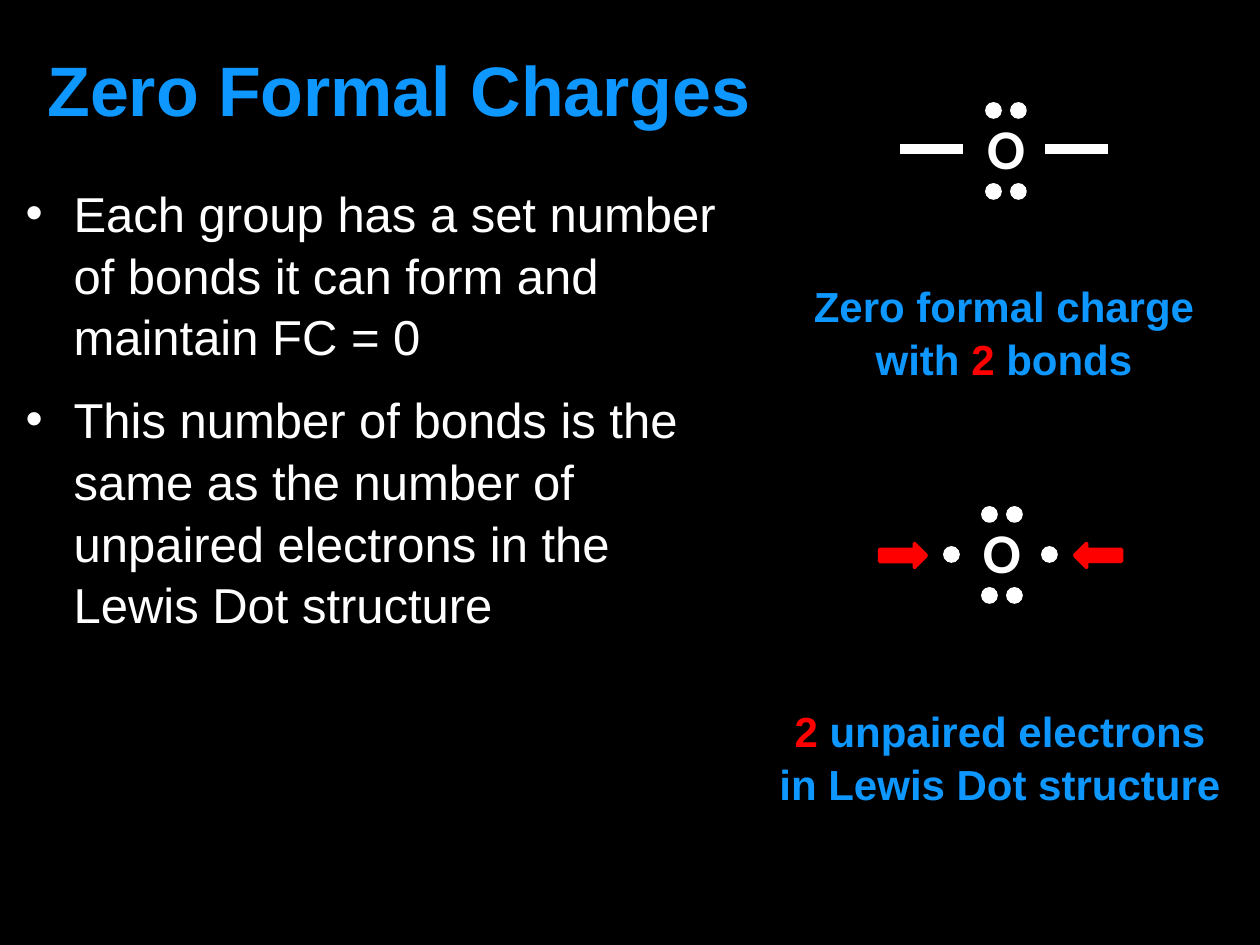
from dataclasses import dataclass

from lxml.etree import SubElement
from pptx import Presentation
from pptx.dml.color import RGBColor
from pptx.enum.shapes import MSO_CONNECTOR, MSO_SHAPE
from pptx.enum.text import MSO_ANCHOR, MSO_AUTO_SIZE, PP_ALIGN
from pptx.oxml.ns import qn
from pptx.util import Emu, Pt

EMU_PER_PX = 914400 / 126


def px(length):
    return Emu(round(length * EMU_PER_PX))


@dataclass(frozen=True)
class Theme:
    black: RGBColor = RGBColor(0x00, 0x00, 0x00)
    white: RGBColor = RGBColor(0xFF, 0xFF, 0xFF)
    blue: RGBColor = RGBColor(0x0D, 0x97, 0xFF)
    red: RGBColor = RGBColor(0xFF, 0x00, 0x00)
    font: str = "Arial"
    atom_font: str = "Calibri"
    title: int = 40
    body: int = 28
    atom: int = 32
    caption: int = 24
    line_spacing: float = 1.05


class SlideBuilder:
    def __init__(self, deck, theme):
        self.theme = theme
        self.slide = deck.slides.add_slide(deck.slide_layouts[1])
        self.shapes = self.slide.shapes
        background = self.slide.background.fill
        background.solid()
        background.fore_color.rgb = theme.black

    def start_group(self):
        self.shapes = self.slide.shapes.add_group_shape().shapes

    def place(self, shape, left, top, width, height):
        bounds = {"left": left, "top": top, "width": width, "height": height}
        for name, value in bounds.items():
            setattr(shape, name, px(value))

    def add_span(self, para, text, size, color, bold=True, font=None):
        span = para.add_run()
        span.text = text
        values = {"name": font or self.theme.font, "size": Pt(size), "bold": bold}
        for name, value in values.items():
            setattr(span.font, name, value)
        span.font.color.rgb = color

    def title(self, text, *bounds):
        box = self.slide.shapes.title
        self.place(box, *bounds)
        frame = box.text_frame
        frame.auto_size = MSO_AUTO_SIZE.NONE
        frame.vertical_anchor = MSO_ANCHOR.MIDDLE
        para = frame.paragraphs[0]
        para.alignment = PP_ALIGN.CENTER
        self.add_span(para, text, self.theme.title, self.theme.blue)

    def bullets(self, items, *bounds):
        box = self.slide.placeholders[1]
        self.place(box, *bounds)
        frame = box.text_frame
        frame.auto_size = MSO_AUTO_SIZE.NONE
        for index, text in enumerate(items):
            para = frame.add_paragraph() if index else frame.paragraphs[0]
            para.space_before = Pt(12)
            para.line_spacing = self.theme.line_spacing
            properties = para._p.get_or_add_pPr()
            for name, value in {"marL": px(48), "indent": -px(48)}.items():
                properties.set(name, str(value))
            SubElement(properties, qn("a:buFont")).set("typeface", self.theme.font)
            SubElement(properties, qn("a:buChar")).set("char", "•")
            self.add_span(para, text, self.theme.body, self.theme.white, bold=False)

    def text_box(self, *bounds):
        box = self.shapes.add_textbox(*map(px, bounds))
        box.text_frame.word_wrap = False
        return box.text_frame

    def caption(self, lines, *bounds):
        """Each line is a list of spans; digits stand out in red."""
        frame = self.text_box(*bounds)
        for index, spans in enumerate(lines):
            para = frame.add_paragraph() if index else frame.paragraphs[0]
            para.alignment = PP_ALIGN.CENTER
            para.line_spacing = self.theme.line_spacing
            for text in spans:
                color = self.theme.red if text.isdigit() else self.theme.blue
                self.add_span(para, text, self.theme.caption, color)

    def symbol(self, text, center_x, center_y):
        frame = self.text_box(center_x - 19, center_y - 38, 38, 68)
        margins = ("margin_left", "margin_top", "margin_right", "margin_bottom")
        for name in margins:
            setattr(frame, name, 0)
        para = frame.paragraphs[0]
        para.alignment = PP_ALIGN.CENTER
        self.add_span(para, text, self.theme.atom, self.theme.white,
                      font=self.theme.atom_font)

    def solid(self, kind, color, line_width, *bounds):
        shape = self.shapes.add_shape(kind, *map(px, bounds))
        shape.shadow.inherit = False
        shape.fill.solid()
        shape.fill.fore_color.rgb = color
        shape.line.color.rgb = color
        shape.line.width = Pt(line_width)
        return shape

    def electron(self, left, top):
        self.solid(MSO_SHAPE.OVAL, self.theme.white, 1, left, top, 15, 15)

    def arrow(self, left, top, rotation):
        shape = self.solid(MSO_SHAPE.DOWN_ARROW, self.theme.red, 2, left, top, 24, 47)
        shape.rotation = rotation

    def bond(self, left, top):
        ends = map(px, (left, top, left + 63, top))
        line = self.shapes.add_connector(MSO_CONNECTOR.STRAIGHT, *ends)
        line.line.color.rgb = self.theme.white
        line.line.width = Pt(6)
        SubElement(line._element.spPr, qn("a:effectLst"))

    def oxygen(self, center_x, center_y):
        """The symbol with a lone pair above and below it."""
        self.symbol("O", center_x, center_y)
        for top in (center_y - 48, center_y + 33):
            for left in (center_x - 20, center_x + 5):
                self.electron(left, top)


def main():
    deck = Presentation()
    deck.slide_width, deck.slide_height = px(1260), px(945)
    page = SlideBuilder(deck, Theme())

    # Title and explanation
    page.title("Zero Formal Charges", 25, 38, 748, 101)
    page.bullets([
        "Each group has a set number of bonds it can form and maintain FC = 0",
        "This number of bonds is the same as the number of unpaired electrons "
        "in the Lewis Dot structure",
    ], 13, 174, 727, 733)

    # Lewis dot structure with arrows at its unpaired electrons
    page.start_group()
    page.oxygen(1002, 555)
    for electron_left, arrow_left, rotation in ((944, 891, 270), (1042, 1086, 90)):
        page.electron(electron_left, 547)
        page.arrow(arrow_left, 532, rotation)
    page.caption([["2", " unpaired electrons"], ["in Lewis Dot structure"]],
                 765, 697, 470, 115)

    # Oxygen with two bonds
    page.start_group()
    page.caption([["Zero formal charge"], ["with ", "2", " bonds"]],
                 799, 272, 410, 115)
    page.oxygen(1006, 151)
    for left in (900, 1045):
        page.bond(left, 149)

    deck.save("out.pptx")


if __name__ == "__main__":
    main()
